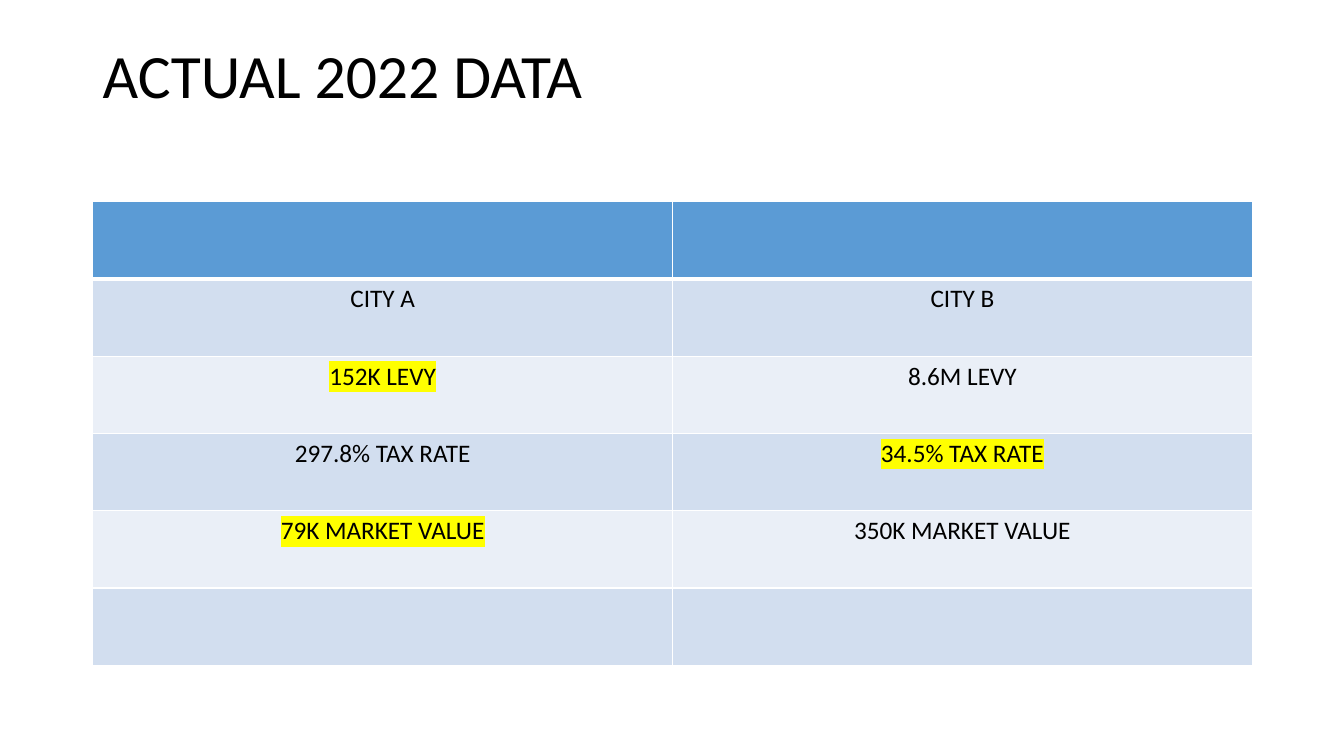
"""Build the slide comparing actual 2022 tax data of two cities."""
from dataclasses import dataclass

from lxml import etree
from pptx import Presentation
from pptx.dml.color import RGBColor
from pptx.enum.text import MSO_ANCHOR, PP_ALIGN
from pptx.oxml.ns import qn
from pptx.table import _Cell
from pptx.text.text import _Paragraph
from pptx.util import Inches, Pt

COLORS = {
    "text": "000000",
    "header": "5B9BD5",
    "odd": "D2DEEF",
    "even": "EAEFF7",
    "border": "FFFFFF",
    "highlight": "FFFF00",
}
FONT = "Calibri"
LEFT, WIDTH = 0.92, 11.5
TABLE_TOP, TABLE_HEIGHT = 2, 4.6


@dataclass
class Entry:
    text: str = ""
    highlighted: bool = False


ROWS = [
    [Entry(), Entry()],
    [Entry("CITY A"), Entry("CITY B")],
    [Entry("152K LEVY", True), Entry("8.6M LEVY")],
    [Entry("297.8% TAX RATE"), Entry("34.5% TAX RATE", True)],
    [Entry("79K MARKET VALUE", True), Entry("350K MARKET VALUE")],
    [Entry(), Entry()],
]


def add_color(parent: etree._Element, tag: str, color: str) -> etree._Element:
    el = etree.SubElement(parent, qn(tag))
    etree.SubElement(el, qn("a:srgbClr"), val=COLORS[color])
    return el


def add_run(p: _Paragraph, text: str, size: int, highlighted: bool = False) -> None:
    r = p.add_run()
    r.text = text
    r.font.size = Pt(size)
    r.font.bold = False
    r.font.color.rgb = RGBColor.from_string(COLORS["text"])
    if highlighted:
        add_color(r.font._element, "a:highlight", "highlight")
    r.font.name = FONT


def set_borders(cell: _Cell, top: int, bottom: int) -> None:
    tc_pr = cell._tc.get_or_add_tcPr()
    for tag, width in (("a:lnL", 1), ("a:lnR", 1), ("a:lnT", top), ("a:lnB", bottom)):
        ln = etree.SubElement(tc_pr, qn(tag), w=str(Pt(width)))
        add_color(ln, "a:solidFill", "border")


def fill_cell(cell: _Cell, entry: Entry, row: int) -> None:
    set_borders(cell, top=3 if row == 1 else 1, bottom=3 if row == 0 else 1)
    band = "header" if row == 0 else "odd" if row % 2 else "even"
    cell.fill.solid()
    cell.fill.fore_color.rgb = RGBColor.from_string(COLORS[band])
    if entry.text:
        p = cell.text_frame.paragraphs[0]
        p.alignment = PP_ALIGN.CENTER
        add_run(p, entry.text, 18, entry.highlighted)


def main() -> None:
    prs = Presentation()
    prs.slide_width, prs.slide_height = Inches(13.33), Inches(7.5)
    s = prs.slides.add_slide(prs.slide_layouts[6])

    title = s.shapes.add_textbox(Inches(LEFT), Inches(0.4), Inches(WIDTH), Inches(1.45))
    tf = title.text_frame
    tf.word_wrap = True
    tf.vertical_anchor = MSO_ANCHOR.TOP
    p = tf.paragraphs[0]
    p.line_spacing = 0.9
    add_run(p, "ACTUAL 2022 DATA", 44)

    table = s.shapes.add_table(
        len(ROWS), len(ROWS[0]),
        Inches(LEFT), Inches(TABLE_TOP), Inches(WIDTH), Inches(TABLE_HEIGHT),
    ).table
    for i, row in enumerate(ROWS):
        for j, entry in enumerate(row):
            fill_cell(table.cell(i, j), entry, i)

    prs.save("out.pptx")


if __name__ == "__main__":
    main()
